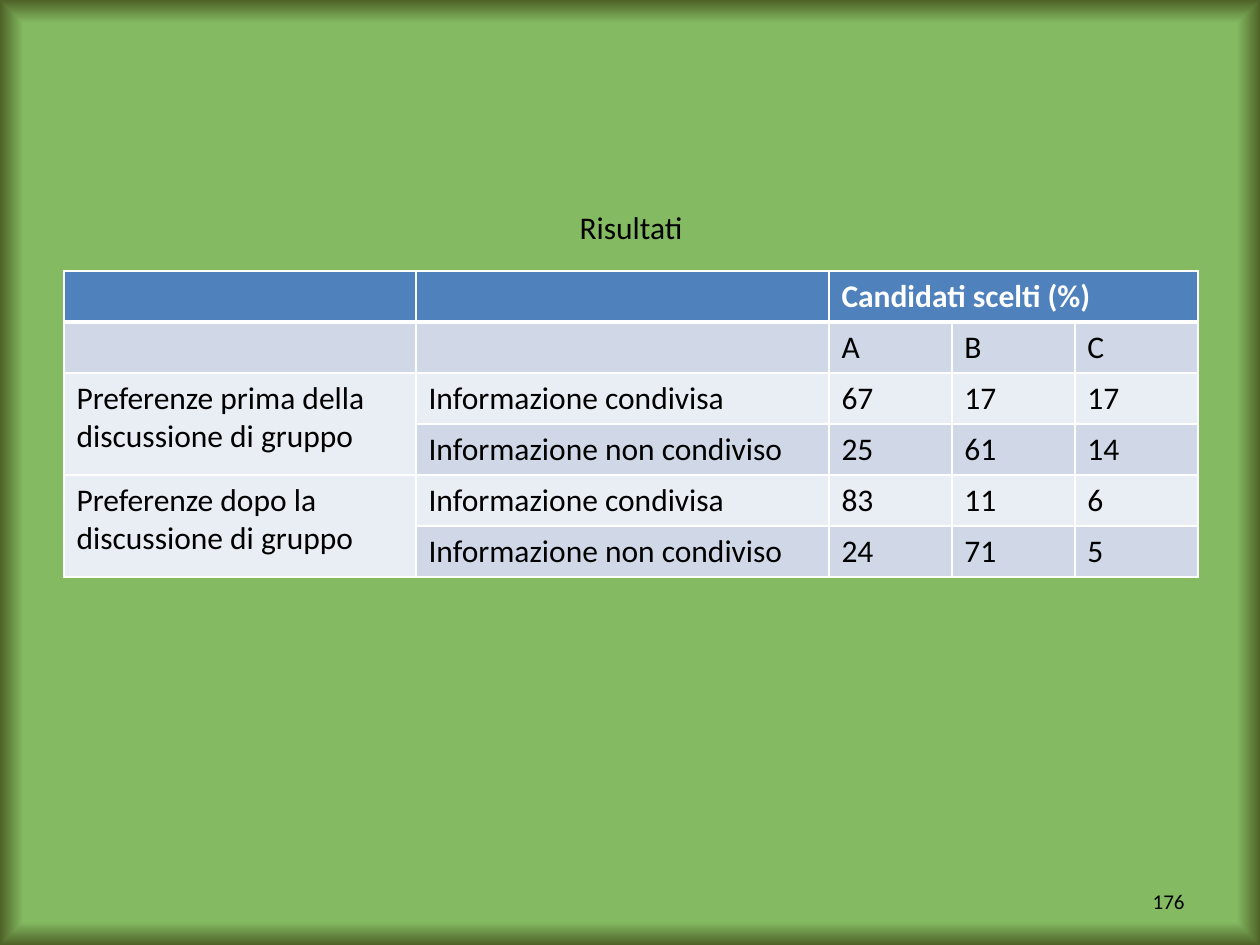
from lxml import etree
from pptx import Presentation
from pptx.dml.color import RGBColor
from pptx.enum import text
from pptx.oxml import parse_xml
from pptx.oxml.ns import nsdecls, qn
from pptx.util import Pt

# Content
TITLE = "Risultati"
PAGE = "176"
SHARED, UNSHARED = "Informazione condivisa", "Informazione non condiviso"
ROWS = [
    ("", "", "Candidati scelti (%)", "", ""),
    ("", "", "A", "B", "C"),
    ("Preferenze prima della discussione di gruppo", SHARED, "67", "17", "17"),
    ("", UNSHARED, "25", "61", "14"),
    ("Preferenze dopo la discussione di gruppo", SHARED, "83", "11", "6"),
    ("", UNSHARED, "24", "71", "5"),
]
MERGES = [((0, 2), (0, 4)), ((2, 0), (3, 0)), ((4, 0), (5, 0))]

# Layout in px
SCALE = 914400 / 126
COL_W = [352, 413, 123, 123, 123]
ROW_H = 51
TABLE_X, TABLE_Y = 64, 271

FONT = "Calibri"
BLACK = RGBColor(0x00, 0x00, 0x00)
WHITE = RGBColor(0xFF, 0xFF, 0xFF)
HEADER = RGBColor(0x4F, 0x81, 0xBD)
BANDS = [RGBColor(0xE9, 0xED, 0xF4), RGBColor(0xD0, 0xD8, 0xE8)]
GREEN = RGBColor(0x84, 0xBB, 0x62)
OLIVE = RGBColor(0x4F, 0x62, 0x28)


def px(n):
    return round(n * SCALE)


def place(sp, x, y, w, h):
    sp.left, sp.top, sp.width, sp.height = map(px, (x, y, w, h))


def style(p, size, color=BLACK, bold=False):
    p.font.name, p.font.size, p.font.bold = FONT, Pt(size), bold
    p.font.color.rgb = color


def write(sp, words, size, align, wrap):
    tf = sp.text_frame
    tf.text = words
    tf.word_wrap = wrap
    tf.vertical_anchor = text.MSO_ANCHOR.MIDDLE
    p = tf.paragraphs[0]
    p.alignment = align
    style(p, size)


def border(cell, side, width):
    ln = etree.SubElement(cell._tc.get_or_add_tcPr(), qn(f"a:ln{side}"), w=str(Pt(width)))
    fill = etree.SubElement(ln, qn("a:solidFill"))
    etree.SubElement(fill, qn("a:srgbClr"), val=str(WHITE))


def set_background(slide):
    slide.background.fill.solid()
    old = slide.element.find(".//" + qn("p:bgPr"))[0]
    old.getparent().replace(old, parse_xml(
        f'<a:gradFill {nsdecls("a")} rotWithShape="1"><a:gsLst>'
        f'<a:gs pos="95000"><a:srgbClr val="{GREEN}"/></a:gs>'
        f'<a:gs pos="100000"><a:srgbClr val="{OLIVE}"/></a:gs></a:gsLst>'
        '<a:path path="shape"><a:fillToRect l="50000" t="50000" r="50000" b="50000"/>'
        '</a:path></a:gradFill>'))


def add_results(slide):
    table = slide.shapes.add_table(
        len(ROWS), len(COL_W), px(TABLE_X), px(TABLE_Y),
        px(sum(COL_W)), px(ROW_H * len(ROWS))).table
    for col, w in zip(table.columns, COL_W):
        col.width = px(w)
    for i, row in enumerate(ROWS):
        table.rows[i].height = px(ROW_H)
        for j, words in enumerate(row):
            cell = table.cell(i, j)
            # A thick line parts the header from the body
            widths = {"L": 1, "R": 1, "T": 3 if i == 1 else 1, "B": 3 if i == 0 else 1}
            for side, width in widths.items():
                border(cell, side, width)
            cell.fill.solid()
            cell.fill.fore_color.rgb = BANDS[i % 2] if i else HEADER
            cell.text = words
            style(cell.text_frame.paragraphs[0], 18, BLACK if i else WHITE, i == 0)
    for first, last in MERGES:
        table.cell(*first).merge(table.cell(*last))


def main():
    prs = Presentation()
    prs.slide_width, prs.slide_height = px(1260), px(945)
    slide = prs.slides.add_slide(prs.slide_layouts[5])
    set_background(slide)

    # Title
    title = slide.shapes.title
    place(title, 567, 201, 129, 51)
    write(title, TITLE, 18, text.PP_ALIGN.LEFT, False)

    # Page number
    number = slide.shapes.add_textbox(0, 0, 0, 0)
    place(number, 903, 876, 294, 50)
    write(number, PAGE, 12, text.PP_ALIGN.RIGHT, True)

    add_results(slide)
    prs.save("out.pptx")


if __name__ == "__main__":
    main()
